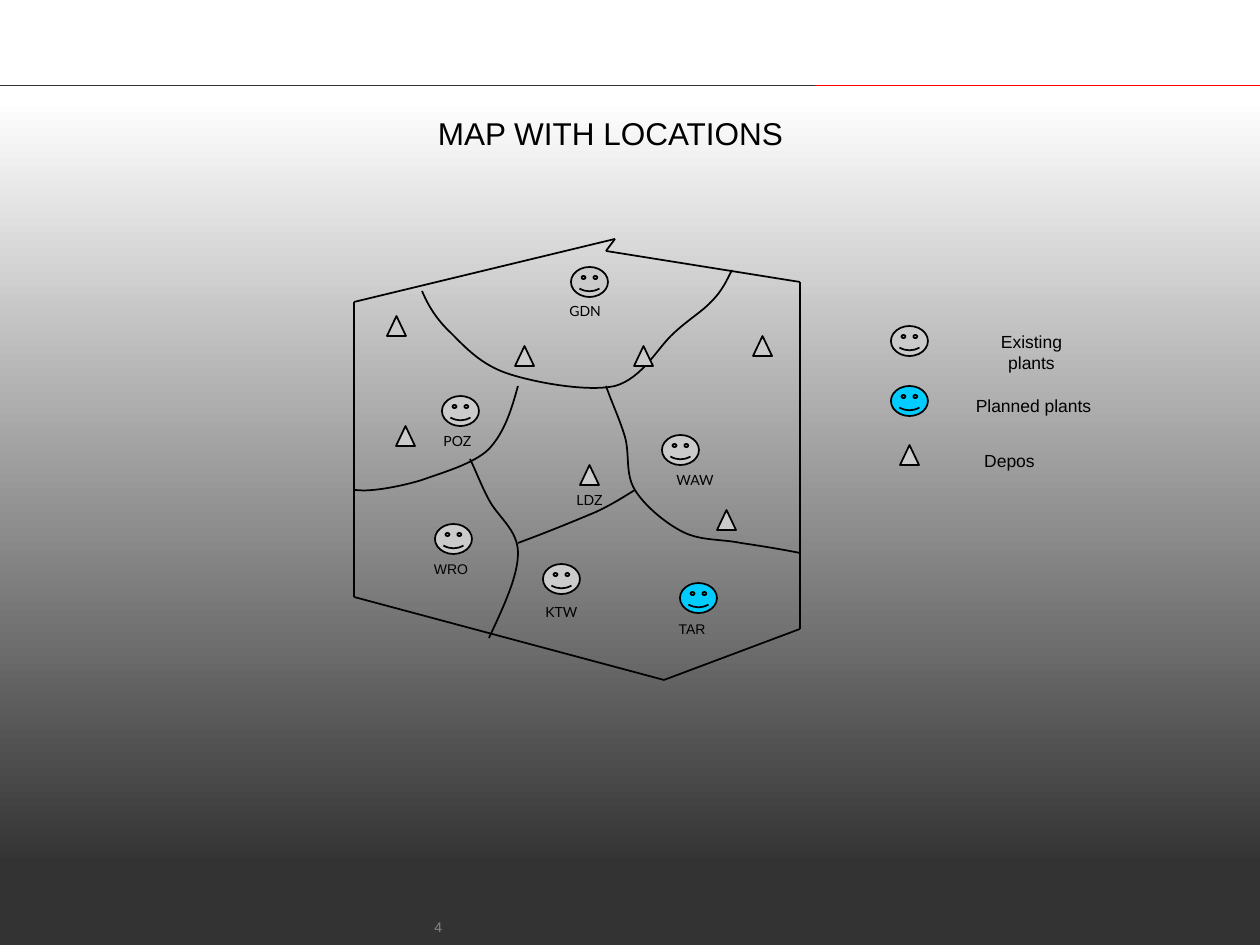
from itertools import pairwise

from lxml.etree import SubElement
from pptx import Presentation
from pptx.dml.color import RGBColor
from pptx.enum.shapes import MSO_CONNECTOR, MSO_SHAPE
from pptx.enum.text import MSO_AUTO_SIZE as AutoSize, PP_ALIGN as Align
from pptx.oxml.ns import qn
from pptx.util import Pt

EMU_PER_PX = 914400 / 126
COLORS = {
    "black": "000000", "white": "FFFFFF", "dark": "333333", "red": "FF0000",
    "existing": "CBCBCB", "planned": "00CCFF", "number": "868686",
}
BORDER = [(354, 597), (664, 680), (800, 629), (800, 282), (606, 251),
          (615, 239), (354, 302), (354, 597)]
REGION_CURVES = [
    [(422, 291), (428, 305), (436, 319), (451, 333), (465, 347), (481, 365),
     (509, 374), (537, 383), (588, 392), (615, 386), (643, 378), (658, 347),
     (674, 333), (689, 319), (703, 311), (712, 301), (722, 291), (727, 280),
     (732, 270)],
    [(518, 386), (512, 408), (505, 432), (489, 449), (474, 464), (441, 473),
     (422, 480), (402, 486), (384, 489), (373, 490), (362, 491), (357, 490),
     (354, 490)],
    [(470, 459), (476, 471), (481, 485), (489, 500), (498, 517), (518, 530),
     (518, 553), (518, 576), (504, 606), (489, 638)],
    [(606, 386), (612, 403), (620, 420), (625, 437), (630, 455), (625, 474),
     (635, 490), (644, 505), (665, 523), (683, 532), (701, 541), (722, 539),
     (741, 543), (761, 546), (780, 549), (800, 553)],
    [(518, 543), (548, 532), (577, 520), (596, 512), (615, 503), (625, 496),
     (635, 490)],
]
EXISTING_PLANTS = [(571, 267), (543, 564), (442, 396), (662, 435), (435, 524),
                   (891, 326)]
PLANNED_PLANTS = [(680, 583), (891, 386)]
DEPOTS = [(387, 316), (634, 346), (515, 346), (396, 426), (580, 465),
          (753, 336), (717, 510), (900, 445)]
CITY_LABELS = [("GDN", 557, 296, 78, 29), ("WAW", 664, 465, 81, 30),
               ("LDZ", 564, 485, 97, 29), ("POZ", 431, 426, 68, 29),
               ("KTW", 533, 597, 116, 29)]
CENTERED_LABELS = [("WRO", 421, 554, 60, 30, 8), ("TAR", 665, 614, 54, 30, 8),
                   ("Existing plants", 963, 325, 137, 34, 10),
                   ("Planned plants", 963, 389, 141, 34, 10),
                   ("Depos", 971, 444, 77, 34, 10)]


def px(*lengths):
    """Turn pixel lengths into a list of EMU."""
    return [round(length * EMU_PER_PX) for length in lengths]


def rgb(name):
    """Look up a named colour."""
    return RGBColor.from_string(COLORS[name])


def add_line(page, start, end, color="black", width=1):
    """Draw a straight line without a shadow."""
    line = page.shapes.add_connector(MSO_CONNECTOR.STRAIGHT, *px(*start, *end))
    line.line.color.rgb = rgb(color)
    line.line.width = Pt(width)
    SubElement(line._element.spPr, qn("a:effectLst"))


def add_curve(page, points):
    """Draw an open chain of cubic curves, three points to each curve."""
    builder = page.shapes.build_freeform(*points[0], scale=EMU_PER_PX)
    builder.add_line_segments(points[1:], close=False)
    curve = builder.convert_to_shape()
    curve.shadow.inherit = False
    curve.fill.background()
    curve.line.color.rgb = rgb("black")
    curve.line.width = Pt(1)
    path = next(curve._element.iter(qn("a:path")))
    segments = path.findall(qn("a:lnTo"))
    for first in range(0, len(segments), 3):
        cubic = SubElement(path, qn("a:cubicBezTo"))
        for segment in segments[first:first + 3]:
            cubic.append(segment[0])
            path.remove(segment)


def add_marker(page, kind, position, size, color):
    """Place an outlined map symbol."""
    marker = page.shapes.add_shape(kind, *px(*position, *size))
    marker.shadow.inherit = False
    marker.fill.solid()
    marker.fill.fore_color.rgb = rgb(color)
    marker.line.color.rgb = rgb("black")
    marker.line.width = Pt(1)


def add_band(page, top, height, colors):
    """Add a full-width band, shaded downwards when given two colours."""
    band = page.shapes.add_shape(MSO_SHAPE.RECTANGLE, *px(0, top, 1260, height))
    band.shadow.inherit = False
    band.line.fill.background()
    if len(colors) == 1:
        band.fill.solid()
        band.fill.fore_color.rgb = rgb(colors[0])
        return
    band.fill.gradient()
    band.fill.gradient_angle = 270
    for stop, position, color in zip(band.fill.gradient_stops, (0, 1), colors):
        stop.position = position
        stop.color.rgb = rgb(color)


def add_text(page, text, place, size, font="Arial", color="black",
             align=Align.LEFT, wrap=True, grow=True):
    """Add a one-line text box."""
    box = page.shapes.add_textbox(*px(*place))
    frame = box.text_frame
    frame.text = text
    frame.word_wrap = wrap
    frame.auto_size = AutoSize.SHAPE_TO_FIT_TEXT if grow else AutoSize.NONE
    para = frame.paragraphs[0]
    para.alignment = align
    span = para.runs[0]
    span.font.name = font
    span.font.size = Pt(size)
    span.font.color.rgb = rgb(color)


def main():
    """Build the map slide and save it."""
    deck = Presentation()
    deck.slide_width, deck.slide_height = px(1260, 945)
    page = deck.slides.add_slide(deck.slide_layouts[6])

    add_line(page, (0, 85), (1260, 85), "red", 0.5)
    add_line(page, (0, 85), (815, 85), "dark", 0.5)
    add_band(page, 866, 79, ["dark"])
    add_band(page, 98, 768, ["white", "dark"])
    add_text(page, "4", (422, 912, 399, 66), 8, color="number", grow=False)
    add_text(page, "MAP WITH LOCATIONS", (242, 108, 737, 50), 18,
             align=Align.CENTER)

    for start, end in pairwise(BORDER):
        add_line(page, start, end)
    for points in REGION_CURVES:
        add_curve(page, points)

    for position in EXISTING_PLANTS:
        add_marker(page, MSO_SHAPE.SMILEY_FACE, position, (37, 30), "existing")
    for position in PLANNED_PLANTS:
        add_marker(page, MSO_SHAPE.SMILEY_FACE, position, (37, 30), "planned")
    for position in DEPOTS:
        add_marker(page, MSO_SHAPE.ISOSCELES_TRIANGLE, position, (19, 20),
                   "existing")

    for text, *place in CITY_LABELS:
        add_text(page, text, place, 8, font="Lato")
    for text, *place, size in CENTERED_LABELS:
        add_text(page, text, place, size, align=Align.CENTER, wrap=False)

    deck.save("out.pptx")


if __name__ == "__main__":
    main()
